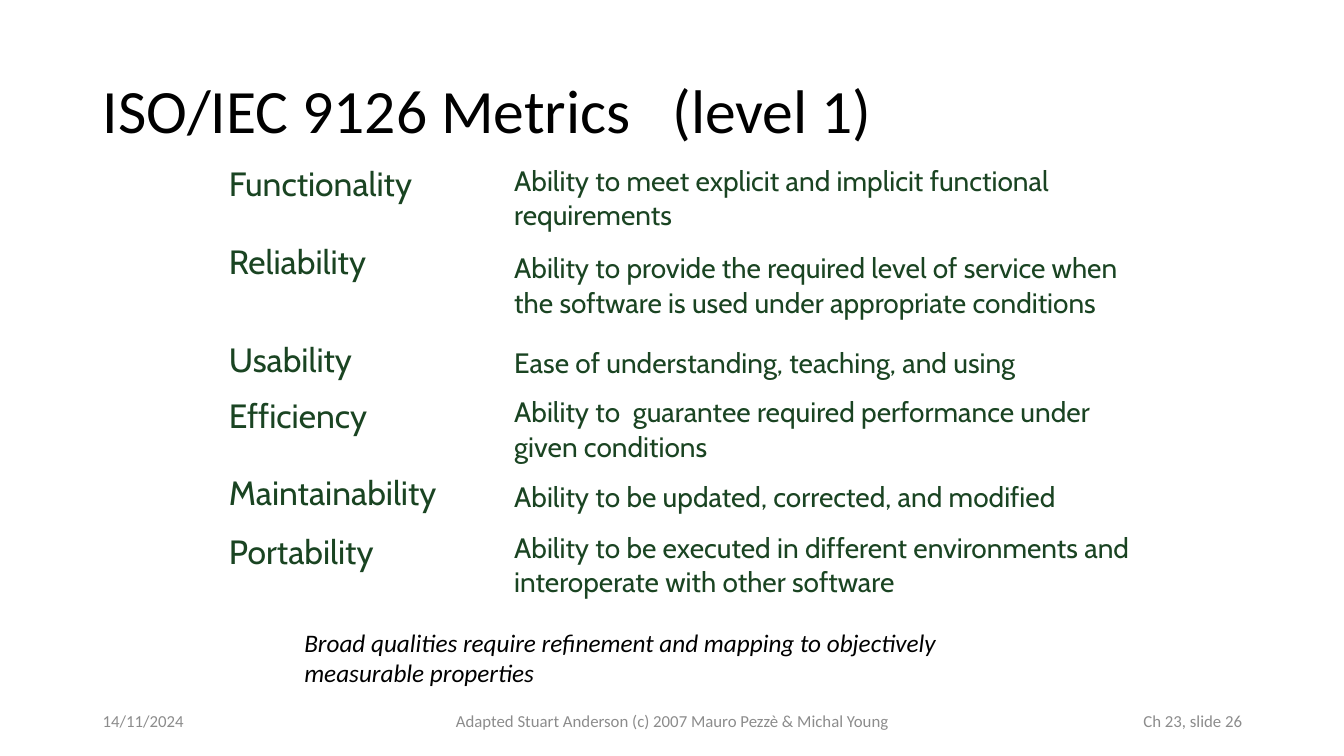
"""Builds a slide that lists the ISO/IEC 9126 top-level quality metrics."""
import pptx
import pptx.dml.color
import pptx.enum.text
import pptx.util
from pptx.util import Inches

ALIGN = pptx.enum.text.PP_ALIGN
ANCHOR = pptx.enum.text.MSO_ANCHOR
BLACK, GREY, GREEN = "000000", "8C8C8C", "1A4422"
FOOTER_TOP, FOOTER_HEIGHT = 6.95, 0.4

METRICS = [
    ("Functionality", "Ability to meet explicit and implicit functional requirements", 0.75),
    ("Reliability", "Ability to provide the required level of service when the software "
     "is used under appropriate conditions", 0.98),
    ("Usability", "Ease of understanding, teaching, and using", 0.55),
    ("Efficiency", "Ability to  guarantee required performance under given conditions", 0.48),
    ("Maintainability", "Ability to be updated, corrected, and modified", 0.58),
    ("Portability", "Ability to be executed in different environments and interoperate "
     "with other software", 0.61),
]
FOOTERS = [
    ("14/11/2024", 0.92, 3, ALIGN.LEFT),
    ("Adapted Stuart Anderson (c) 2007 Mauro Pezzè & Michal Young", 4.42, 4.5, ALIGN.CENTER),
    ("Ch 23, slide 26", 9.42, 3, ALIGN.RIGHT),
]


def rgb(color):
    """Return the colour for a hex string."""
    return pptx.dml.color.RGBColor.from_string(color)


def write(frame, text, size, font, color):
    """Put one styled paragraph into a text frame and return it."""
    paragraph = frame.paragraphs[0]
    paragraph.text = text
    paragraph.font.size = pptx.util.Pt(size)
    paragraph.font.name = font
    paragraph.font.color.rgb = rgb(color)
    return paragraph


def add_text(slide, text, left, top, width, height, size, color,
             anchor=ANCHOR.MIDDLE, align=ALIGN.LEFT):
    """Add a wrapping Calibri text box and return its paragraph."""
    box = slide.shapes.add_textbox(Inches(left), Inches(top), Inches(width), Inches(height))
    frame = box.text_frame
    frame.word_wrap = True
    frame.vertical_anchor = anchor
    paragraph = write(frame, text, size, "Calibri", color)
    paragraph.alignment = align
    return paragraph


def add_metrics(slide):
    """Add the unfilled table of metrics and their meanings."""
    widths = (2.83, 6.33)
    total_height = sum(height for _, _, height in METRICS)
    table = slide.shapes.add_table(
        len(METRICS), len(widths), Inches(2.17), Inches(1.58),
        Inches(sum(widths)), Inches(total_height)).table
    table.first_row = False
    table.horz_banding = False
    for column, width in zip(table.columns, widths):
        column.width = Inches(width)
    for row, (metric, meaning, height) in zip(table.rows, METRICS):
        row.height = Inches(height)
        styles = ((metric, 24, ANCHOR.TOP), (meaning, 20, ANCHOR.MIDDLE))
        for cell, (text, size, anchor) in zip(row.cells, styles):
            cell.fill.background()
            cell.vertical_anchor = anchor
            write(cell.text_frame, text, size, "Cabin", GREEN)


def main():
    """Build and save the slide."""
    deck = pptx.Presentation()
    deck.slide_width, deck.slide_height = Inches(13.33), Inches(7.5)
    slide = deck.slides.add_slide(deck.slide_layouts[6])
    title = add_text(slide, "ISO/IEC 9126 Metrics   (level 1)", 0.92, 0.4, 11.5, 1.45, 44, BLACK)
    title.line_spacing = 0.9
    add_metrics(slide)
    conclusion = add_text(
        slide, "Broad qualities require refinement and mapping to objectively measurable properties",
        2.92, 6.17, 7.56, 0.71, 18, BLACK, ANCHOR.TOP)
    conclusion.font.italic = True
    for text, left, width, align in FOOTERS:
        add_text(slide, text, left, FOOTER_TOP, width, FOOTER_HEIGHT, 12, GREY, align=align)
    deck.save("out.pptx")


if __name__ == "__main__":
    main()
